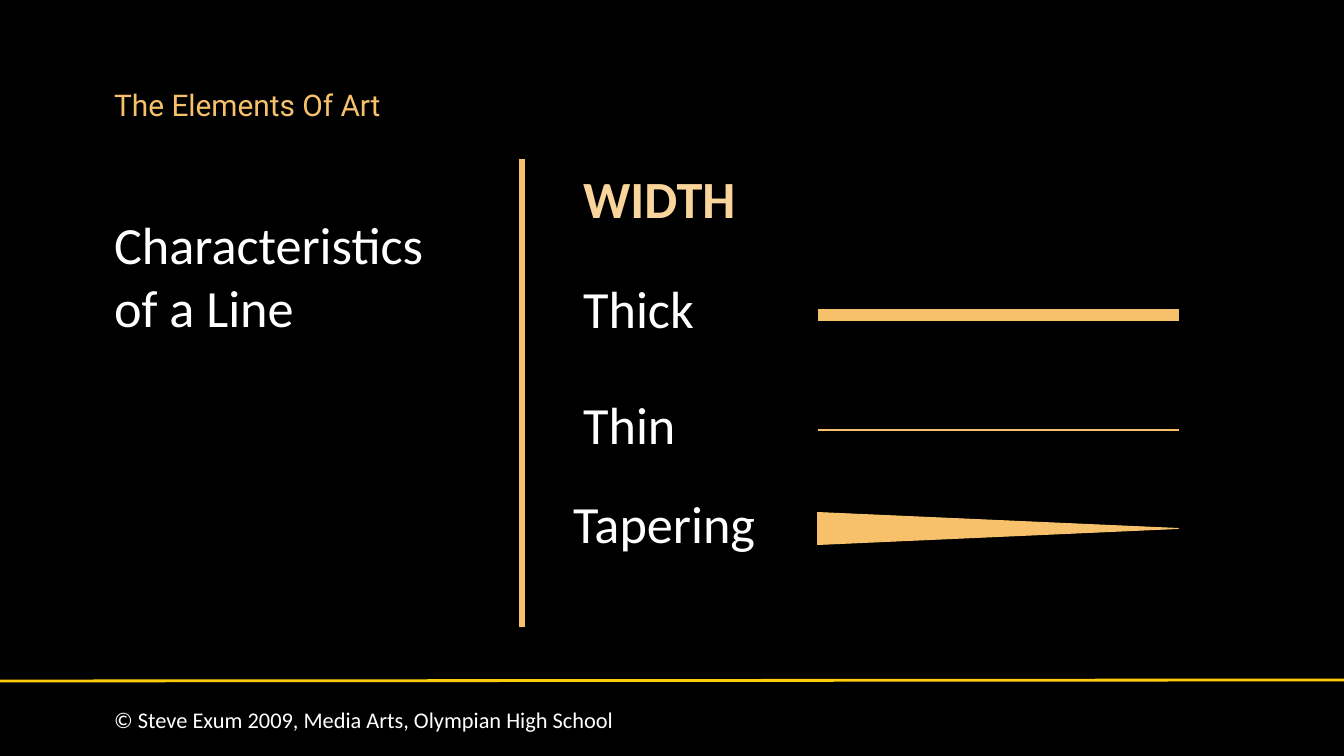
from dataclasses import dataclass

import lxml.etree
import pptx
import pptx.dml.color
import pptx.enum.shapes
import pptx.enum.text
import pptx.oxml.ns
import pptx.slide
import pptx.util

SLIDE_WIDTH, SLIDE_HEIGHT = 1344, 756
EMU_PER_PX = 9144000 / SLIDE_WIDTH
GOLD = "F6C16A"
WHITE = "FFFFFF"


@dataclass(frozen=True)
class Label:
    text: str
    left: int
    top: int
    width: int
    height: int
    size: int = 28
    color: str = WHITE
    font: str = "Calibri"
    bold: bool = False


@dataclass(frozen=True)
class Rule:
    x1: int
    y1: int
    x2: int
    y2: int
    weight: float
    color: str = GOLD


LABELS = [
    Label("© Steve Exum 2009, Media Arts, Olympian High School", 101, 700, 668, 40, size=12),
    Label("The Elements Of Art", 101, 80, 359, 75, size=16, color=GOLD, font="Roboto"),
    Label("Characteristics of a Line", 101, 206, 384, 469),
    Label("WIDTH", 570, 160, 208, 110, color="F9D59B", bold=True),
    Label("Thick", 570, 270, 208, 118),
    Label("Thin", 570, 386, 177, 77),
    Label("Tapering", 560, 485, 258, 118),
]

RULES = [
    Rule(0, 681, SLIDE_WIDTH, 680, 1.5, "FFCB0A"),
    Rule(522, 159, 522, 627, 3),
    Rule(818, 315, 1179, 315, 6),
    Rule(818, 430, 1179, 430, 1.5),
]


def px(length: int) -> pptx.util.Emu:
    return pptx.util.Emu(round(length * EMU_PER_PX))


def rgb(color: str) -> pptx.dml.color.RGBColor:
    return pptx.dml.color.RGBColor.from_string(color)


def draw_label(slide: pptx.slide.Slide, label: Label) -> None:
    box = slide.shapes.add_textbox(
        px(label.left), px(label.top), px(label.width), px(label.height)
    )
    frame = box.text_frame
    frame.word_wrap = True
    frame.vertical_anchor = pptx.enum.text.MSO_ANCHOR.TOP
    paragraph = frame.paragraphs[0]
    paragraph.text = label.text
    paragraph.font.name = label.font
    paragraph.font.size = pptx.util.Pt(label.size)
    paragraph.font.bold = label.bold
    paragraph.font.color.rgb = rgb(label.color)


def draw_rule(slide: pptx.slide.Slide, rule: Rule) -> None:
    connector = slide.shapes.add_connector(
        pptx.enum.shapes.MSO_CONNECTOR.STRAIGHT,
        px(rule.x1), px(rule.y1), px(rule.x2), px(rule.y2),
    )
    connector.line.color.rgb = rgb(rule.color)
    connector.line.width = pptx.util.Pt(rule.weight)
    properties = connector.element.spPr
    lxml.etree.SubElement(properties, pptx.oxml.ns.qn("a:effectLst"))


def draw_taper(slide: pptx.slide.Slide) -> None:
    taper = slide.shapes.add_shape(
        pptx.enum.shapes.MSO_SHAPE.ISOSCELES_TRIANGLE,
        px(982), px(348), px(32), px(361),
    )
    taper.rotation = 90
    taper.shadow.inherit = False
    taper.fill.solid()
    taper.fill.fore_color.rgb = rgb(GOLD)
    taper.line.color.rgb = rgb(GOLD)
    taper.line.width = pptx.util.Pt(0.5)


def main() -> None:
    deck = pptx.Presentation()
    deck.slide_width = px(SLIDE_WIDTH)
    deck.slide_height = px(SLIDE_HEIGHT)
    slide = deck.slides.add_slide(deck.slide_layouts[6])
    slide.background.fill.solid()
    slide.background.fill.fore_color.rgb = rgb("000000")
    for rule in RULES:
        draw_rule(slide, rule)
    draw_taper(slide)
    for label in LABELS:
        draw_label(slide, label)
    deck.save("out.pptx")


if __name__ == "__main__":
    main()
